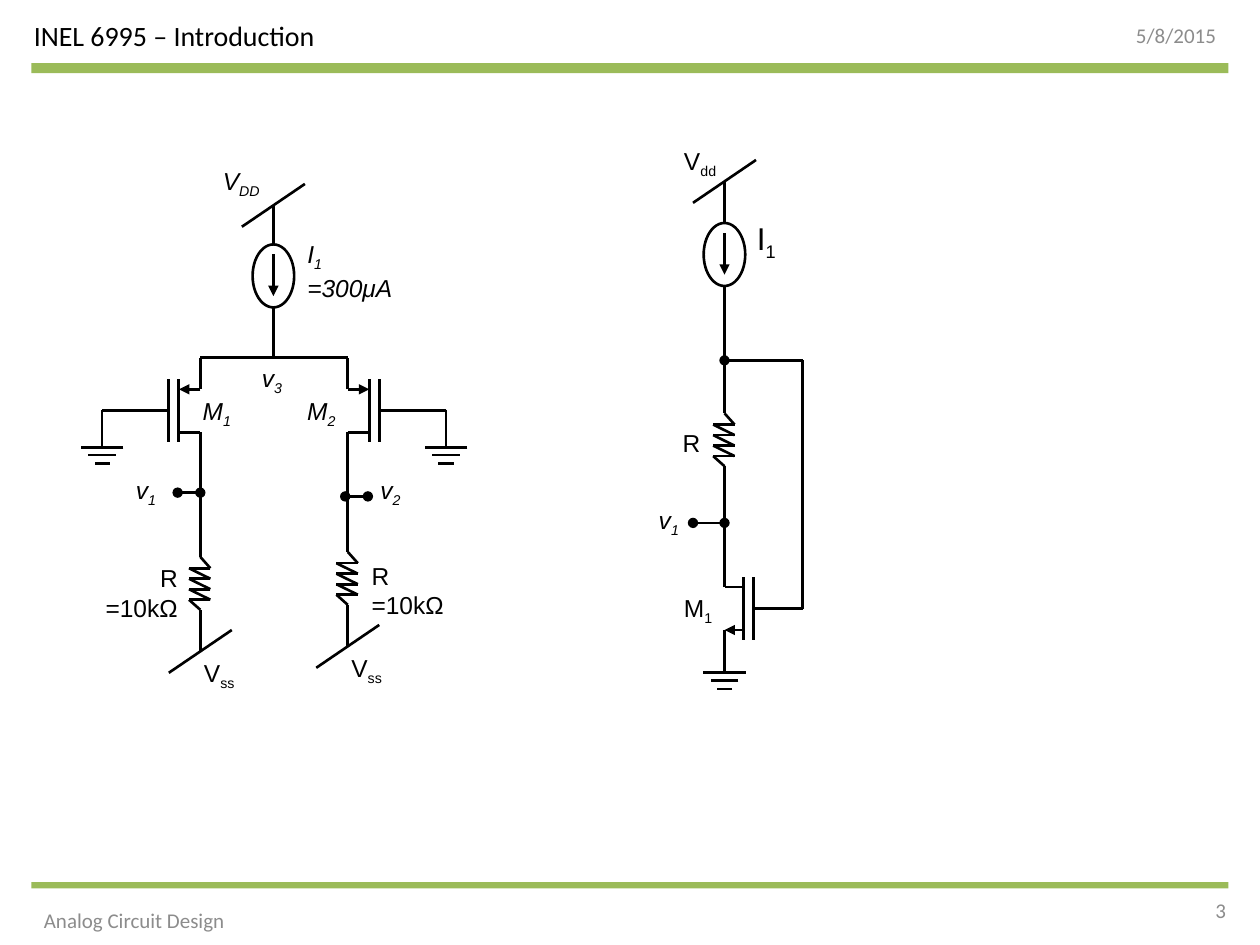
from dataclasses import dataclass
from itertools import pairwise

from lxml.etree import SubElement
from pptx import Presentation
from pptx.dml.color import RGBColor
from pptx.enum.shapes import MSO_CONNECTOR, MSO_SHAPE
from pptx.enum.text import MSO_ANCHOR, MSO_AUTO_SIZE, PP_ALIGN
from pptx.oxml.ns import qn
from pptx.util import Cm, Length, Pt


@dataclass(frozen=True)
class Theme:
    ink: RGBColor = RGBColor(0, 0, 0)
    grey: RGBColor = RGBColor(0x8C, 0x8C, 0x8C)
    accent: RGBColor = RGBColor(0x9B, 0xBB, 0x59)
    head_font: str = "Calibri"
    label_font: str = "Arial"
    title: float = 16
    small: float = 12
    label: float = 14
    large: float = 18
    thin: float = 1.5
    thick: float = 1.75


@dataclass(frozen=True)
class Label:
    text: str  # "_" starts a subscript
    x: float
    y: float
    w: float
    h: float = 0.34
    italic: bool = False
    size: float = 14
    align: PP_ALIGN = PP_ALIGN.LEFT


@dataclass(frozen=True)
class Wire:
    x1: float
    y1: float
    x2: float
    y2: float
    width: float = 1.5
    head: str = ""
    tail: str = ""


T = Theme()
UNIT = 2.54  # centimetres in one unit of the drawing grid


def u(v: float) -> Length:
    return Cm(v * UNIT)


# --- Text, bars and lines ---
def add_text(shapes, text: str, x: float, y: float, w: float, h: float, *,
             font: str, size: float, color: RGBColor = T.ink, italic: bool = False,
             align: PP_ALIGN = PP_ALIGN.LEFT, anchor: MSO_ANCHOR = MSO_ANCHOR.TOP,
             wrap: bool = True) -> None:
    tf = shapes.add_textbox(u(x), u(y), u(w), u(h)).text_frame
    tf.word_wrap = wrap
    tf.vertical_anchor = anchor
    tf.auto_size = MSO_AUTO_SIZE.NONE if wrap else MSO_AUTO_SIZE.SHAPE_TO_FIT_TEXT
    for i, line in enumerate(text.split("\n")):
        p = tf.add_paragraph() if i else tf.paragraphs[0]
        p.alignment = align
        for j, part in enumerate(line.split("_")):
            r = p.add_run()
            r.text = part
            r.font.name, r.font.size = font, Pt(size)
            r.font.italic = italic
            r.font.color.rgb = color
            if j:
                r.font._element.set("baseline", "-25000")


def add_label(g, lb: Label) -> None:
    add_text(g, lb.text, lb.x, lb.y, lb.w, lb.h, font=T.label_font, size=lb.size,
             italic=lb.italic, align=lb.align, wrap=False)


def add_bar(shapes, y: float, h: float) -> None:
    sp = shapes.add_shape(MSO_SHAPE.RECTANGLE, u(0.25), u(y), u(9.5), u(h))
    sp.shadow.inherit = False
    sp.fill.solid()
    sp.fill.fore_color.rgb = T.accent
    sp.line.fill.background()


def add_wire(g, w: Wire) -> None:
    c = g.add_connector(MSO_CONNECTOR.STRAIGHT, u(w.x1), u(w.y1), u(w.x2), u(w.y2))
    c.line.color.rgb = T.ink
    c.line.width = Pt(w.width)
    ln = c.line._get_or_add_ln()
    for tag, kind in (("a:headEnd", w.head), ("a:tailEnd", w.tail)):
        if kind:
            SubElement(ln, qn(tag), type=kind)
    SubElement(c._element.spPr, qn("a:effectLst"))


# --- Circuit symbols ---
def add_resistor(g, x: float, top: float) -> None:
    zigzag = [(dx, 0.25 + i / 12) for i in range(4) for dx in (0.08, -0.09)]
    points = [(0, 0), (0, 0.16), *zigzag, (0, 0.58), (0, 0.75)]
    for (x1, y1), (x2, y2) in pairwise(points):
        add_wire(g, Wire(x + x1, top + y1, x + x2, top + y2))


def add_ground(g, x: float, y: float) -> None:
    add_wire(g, Wire(x, y - 0.12, x, y))
    for half, dy in ((0.17, 0), (0.11, 0.06), (0.06, 0.13)):
        add_wire(g, Wire(x + half, y + dy, x - half, y + dy))


def add_supply(g, x: float, y: float, lead: float) -> None:
    add_wire(g, Wire(x, y, x, y + lead))
    add_wire(g, Wire(x + 0.25, y - 0.17, x - 0.25, y + 0.17))


def add_current_source(g, x: float, top: float) -> None:
    add_wire(g, Wire(x, top - 0.17, x, top))
    add_wire(g, Wire(x, top + 0.5, x, top + 0.67))
    sp = g.add_shape(MSO_SHAPE.OVAL, u(x - 0.165), u(top), u(0.33), u(0.5))
    sp.shadow.inherit = False
    sp.fill.background()
    sp.line.color.rgb = T.ink
    sp.line.width = Pt(T.thin)
    add_wire(g, Wire(x, top + 0.08, x, top + 0.41, tail="triangle"))


def add_mosfet(g, x: float, y: float, side: int, plate: float, width: float,
               p_type: bool) -> None:
    inner, outer = x + side * plate, x + side * (plate + 0.08)
    for sign in (-1, 1):
        stub = y + sign * 0.17
        add_wire(g, Wire(x, stub, x, y + sign * 0.42, width))
        add_wire(g, Wire(x, stub, inner, stub, width,
                         head="triangle" if not p_type and sign > 0 else "",
                         tail="triangle" if p_type and sign < 0 else ""))
    for px in (inner, outer):
        add_wire(g, Wire(px, y - 0.25, px, y + 0.25, width))
    add_wire(g, Wire(outer, y, outer + side * 0.25, y, width))


# --- Differential pair ---
def draw_pair(g) -> None:
    add_supply(g, 2.17, 1.63, 0.16)
    add_current_source(g, 2.17, 1.94)
    # Each branch: drain x, side of the gate, ground x, top of resistor, Vss height
    for x, side, gnd, top, vss in ((1.59, -1, 0.81, 4.26, 5.17),
                                   (2.76, 1, 3.54, 4.22, 5.13)):
        add_mosfet(g, x, 3.26, side, 0.17, T.thick, True)
        add_wire(g, Wire(gnd, 3.26, x + side * 0.46, 3.26, T.thick))
        add_wire(g, Wire(gnd, 3.25, gnd, 3.43))
        add_ground(g, gnd, 3.55)
        add_wire(g, Wire(x, 3.6, x, 4.26, T.thick))
        add_resistor(g, x, top)
        add_supply(g, x, vss, -0.17)
    for w in (Wire(1.59, 2.84, 2.76, 2.84, T.thick),
              Wire(2.17, 2.84, 2.17, 2.51, T.thick),
              Wire(1.41, 3.91, 1.59, 3.91, T.thick, "oval", "oval"),
              Wire(2.74, 3.94, 2.92, 3.94, T.thick, "oval", "oval")):
        add_wire(g, w)
    for lb in (Label("V_DD", 1.67, 1.27, 0.52, italic=True),
               Label("I_1\n=300μA", 2.34, 1.85, 0.88, 0.57, italic=True),
               Label("v_3", 1.98, 2.83, 0.37, italic=True),
               Label("M_1", 1.51, 3.09, 0.44, italic=True),
               Label("M_2", 2.34, 3.09, 0.44, italic=True),
               Label("v_1", 0.98, 3.72, 0.37, italic=True),
               Label("v_2", 2.92, 3.72, 0.37, italic=True),
               Label("R\n=10kΩ", 0.73, 4.42, 0.78, 0.57, align=PP_ALIGN.RIGHT),
               Label("R\n=10kΩ", 2.85, 4.4, 0.78, 0.57),
               Label("V_ss", 1.52, 5.17, 0.46),
               Label("V_ss", 2.69, 5.13, 0.46)):
        add_label(g, lb)


# --- Single transistor with feedback to its gate ---
def draw_feedback(g) -> None:
    x = 5.75
    add_supply(g, x, 1.44, 0.17)
    add_current_source(g, x, 1.77)
    add_resistor(g, x, 3.12)
    add_mosfet(g, x, 4.83, 1, 0.15, T.thin, False)
    add_ground(g, x, 5.34)
    for w in (Wire(x, 2.36, x, 3.12), Wire(x, 3.87, x, 4.42),
              Wire(6.37, 2.86, x, 2.86, tail="oval"),
              Wire(6.37, 2.86, 6.37, 4.83), Wire(6.37, 4.83, 6.21, 4.83),
              Wire(x, 4.15, 5.5, 4.15, head="oval", tail="oval")):
        add_wire(g, w)
    for lb in (Label("V_dd", 5.33, 1.11, 0.48),
               Label("I_1", 5.91, 1.69, 0.36, 0.4, size=T.large),
               Label("R", 5.32, 3.35, 0.34),
               Label("v_1", 5.13, 3.96, 0.37, italic=True),
               Label("M_1", 5.33, 4.66, 0.44)):
        add_label(g, lb)


def main() -> None:
    prs = Presentation()
    prs.slide_width, prs.slide_height = u(10), u(7.5)
    s = prs.slides.add_slide(prs.slide_layouts[6])

    # Header and footer
    add_bar(s.shapes, 0.5, 0.08)
    add_bar(s.shapes, 7, 0.05)
    left, right = PP_ALIGN.LEFT, PP_ALIGN.RIGHT
    for text, x, y, w, size, color, align in (
            ("INEL 6995 – Introduction", 0.17, 0.08, 3.33, T.title, T.ink, left),
            ("5/8/2015", 7.42, 0.08, 2.33, T.small, T.grey, right),
            ("Analog Circuit Design", 0.25, 7.1, 1.75, T.small, T.grey, left),
            ("3", 7.5, 7.02, 2.33, T.small, T.grey, right)):
        add_text(s.shapes, text, x, y, w, 0.4, font=T.head_font, size=size,
                 color=color, align=align, anchor=MSO_ANCHOR.MIDDLE)

    # Circuits, one group each
    for draw in (draw_pair, draw_feedback):
        draw(s.shapes.add_group_shape().shapes)
    prs.save("out.pptx")


if __name__ == "__main__":
    main()
